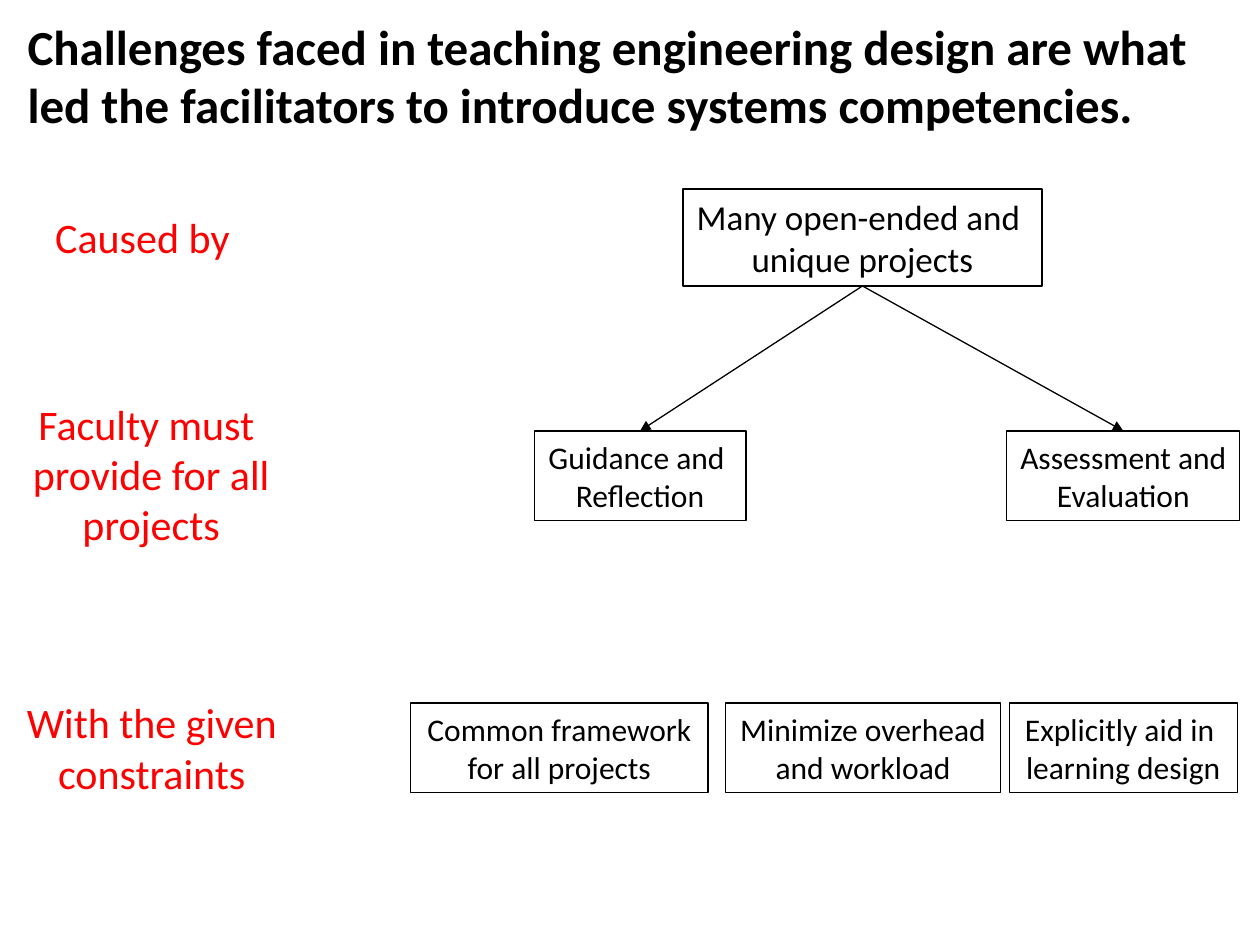
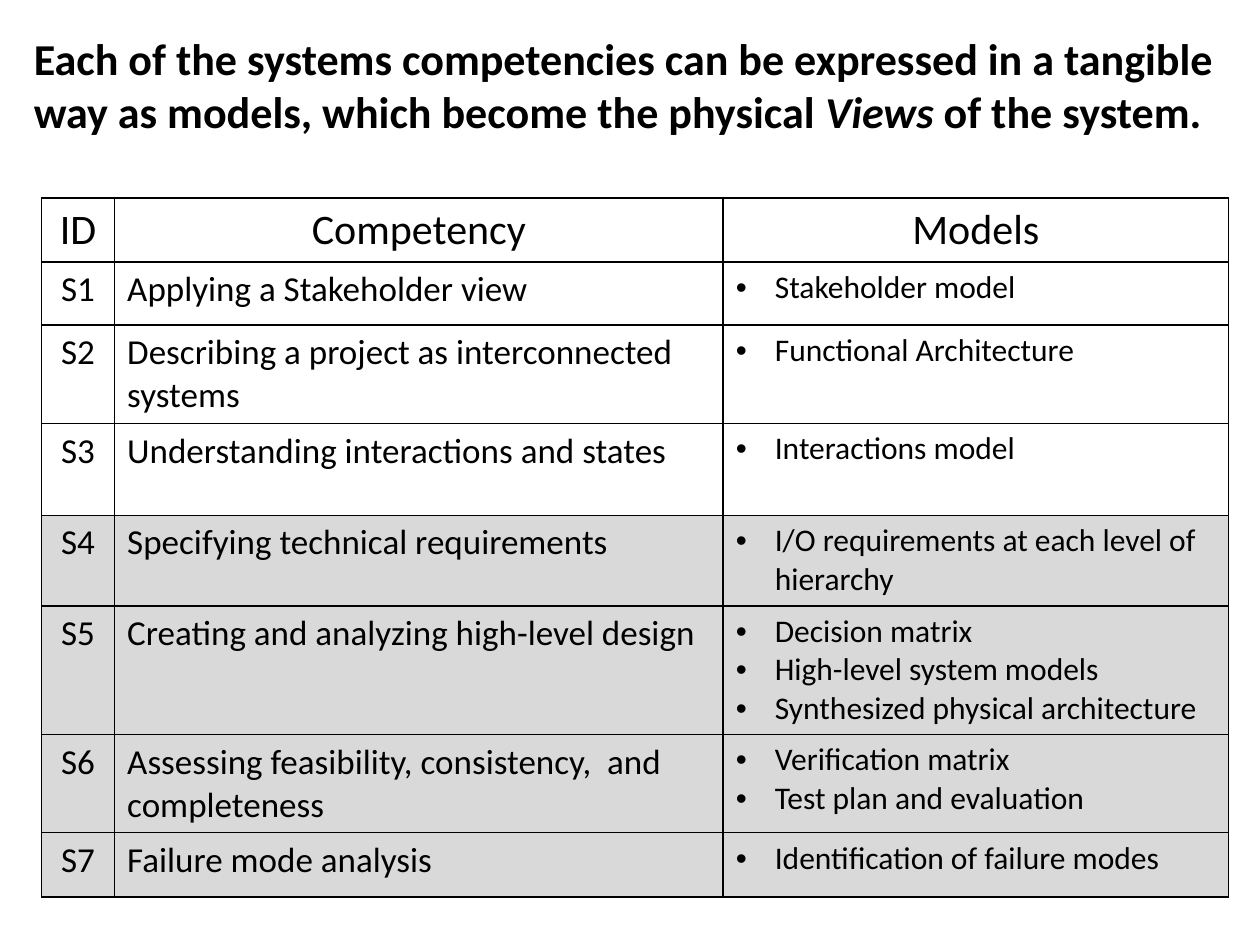
from pptx import Presentation
from pptx.dml.color import RGBColor
from pptx.enum.shapes import MSO_CONNECTOR, MSO_SHAPE
from pptx.enum.text import MSO_ANCHOR, PP_ALIGN
from pptx.oxml import parse_xml
from pptx.oxml.ns import nsdecls
from pptx.oxml.xmlchemy import OxmlElement
from pptx.util import Inches, Pt

COLORS = {"ink": "000000", "label": "FF0000", "paper": "FFFFFF", "shade": "D9D9D9"}
FONT = "Calibri"
BULLET_INDENT = Inches(0.31)
TOP, BOTTOM = 0, 2  # connection sites of a rectangle

LABELS = [
    ((0.34, 1.63, 1.6, 0.5), ["Caused by"], PP_ALIGN.LEFT),
    ((0.15, 3.11, 2.1, 1.31), ["Faculty must ", "provide for all", "projects"], PP_ALIGN.CENTER),
    ((0.1, 5.48, 2.21, 0.91), ["With the given", "constraints"], PP_ALIGN.CENTER),
]
NEEDS = [
    ((7.99, 3.42, 1.85, 0.71), ["Assessment and", "Evaluation"]),
    ((4.24, 3.42, 1.68, 0.71), ["Guidance and ", "Reflection"]),
]
CONSTRAINTS = [
    ((3.26, 5.58, 2.36, 0.71), ["Common framework", "for all projects"]),
    ((5.76, 5.58, 2.18, 0.71), ["Minimize overhead", "and workload"]),
    ((8.01, 5.58, 1.81, 0.71), ["Explicitly aid in ", "learning design"]),
]

HEADINGS = ["ID", "Competency", "Models"]
COLUMN_WIDTHS = [0.58, 4.83, 4.01]
ROW_HEIGHTS = [0.51, 0.5, 0.78, 0.73, 0.72, 1.02, 0.78, 0.51]
FIRST_SHADED_ROW = 4
COMPETENCIES = [
    ("Applying a Stakeholder view", ["Stakeholder model"]),
    ("Describing a project as interconnected systems", ["Functional Architecture"]),
    ("Understanding interactions and states", ["Interactions model"]),
    ("Specifying technical requirements", ["I/O requirements at each level of hierarchy"]),
    ("Creating and analyzing high-level design",
     ["Decision matrix", "High-level system models", "Synthesized physical architecture"]),
    ("Assessing feasibility, consistency,  and completeness",
     ["Verification matrix", "Test plan and evaluation"]),
    ("Failure mode analysis", ["Identification of failure modes"]),
]


def rgb(name):
    return RGBColor.from_string(COLORS[name])


def write(frame, lines, size=18, color="ink", bold=False, align=PP_ALIGN.LEFT,
          bullet=False, italic_word=None):
    """Put each line in its own paragraph, with one word optionally in italics."""
    for number, line in enumerate(lines):
        paragraph = frame.add_paragraph() if number else frame.paragraphs[0]
        paragraph.alignment = align
        for part in line.partition(italic_word) if italic_word else [line]:
            run = paragraph.add_run()
            run.text = part
            run.font.name, run.font.size, run.font.bold = FONT, Pt(size), bold
            run.font.italic = part == italic_word
            run.font.color.rgb = rgb(color)
        if bullet:
            add_bullet(paragraph)


def add_bullet(paragraph):
    properties = paragraph._p.get_or_add_pPr()
    properties.set("marL", str(BULLET_INDENT))
    properties.set("indent", str(-BULLET_INDENT))
    for tag, key, value in (("a:buFont", "typeface", "Arial"), ("a:buChar", "char", "•")):
        mark = OxmlElement(tag)
        mark.set(key, value)
        properties.append(mark)


def add_text(slide, box, lines, anchor=MSO_ANCHOR.TOP, **text_format):
    frame = slide.shapes.add_textbox(*map(Inches, box)).text_frame
    frame.word_wrap = True
    frame.vertical_anchor = anchor
    write(frame, lines, **text_format)


def add_title(slide, box, title, **text_format):
    add_text(slide, box, [title], anchor=MSO_ANCHOR.MIDDLE, bold=True, **text_format)


def add_box(slide, box, lines, size=18):
    rectangle = slide.shapes.add_shape(MSO_SHAPE.RECTANGLE, *map(Inches, box))
    rectangle.shadow.inherit = False
    rectangle.fill.background()
    rectangle.line.color.rgb = rgb("ink")
    rectangle.line.width = Pt(0.75)
    rectangle.text_frame.word_wrap = False
    write(rectangle.text_frame, lines, size=size, align=PP_ALIGN.CENTER)
    return rectangle


def add_arrow(slide, cause, need):
    arrow = slide.shapes.add_connector(MSO_CONNECTOR.STRAIGHT, 0, 0, 0, 0)
    arrow.begin_connect(cause, BOTTOM)
    arrow.end_connect(need, TOP)
    arrow.line.color.rgb = rgb("ink")
    arrow.line.width = Pt(0.75)
    head = OxmlElement("a:tailEnd")
    head.set("type", "triangle")
    arrow.line._get_or_add_ln().append(head)
    arrow._element.spPr.append(OxmlElement("a:effectLst"))


def style_cell(cell, fill):
    cell.fill.solid()
    cell.fill.fore_color.rgb = rgb(fill)
    properties = cell._tc.get_or_add_tcPr()
    for place, side in enumerate("LRTB"):
        properties.insert(place, parse_xml(
            f'<a:ln{side} {nsdecls("a")} w="{Pt(1)}"><a:solidFill>'
            f'<a:srgbClr val="{COLORS["ink"]}"/></a:solidFill></a:ln{side}>'))


def add_competency_table(slide, left, top):
    frame = slide.shapes.add_table(
        len(ROW_HEIGHTS), len(COLUMN_WIDTHS), Inches(left), Inches(top),
        Inches(sum(COLUMN_WIDTHS)), Inches(sum(ROW_HEIGHTS)))
    table = frame.table
    table.first_row = table.horz_banding = False
    for column, width in zip(table.columns, COLUMN_WIDTHS):
        column.width = Inches(width)
    for number, (row, height) in enumerate(zip(table.rows, ROW_HEIGHTS)):
        row.height = Inches(height)
        for cell in row.cells:
            style_cell(cell, "shade" if number >= FIRST_SHADED_ROW else "paper")

    # Heading row
    for column, heading in enumerate(HEADINGS):
        write(table.cell(0, column).text_frame, [heading], size=24, align=PP_ALIGN.CENTER)

    # One row per competency
    for number, (competency, models) in enumerate(COMPETENCIES, start=1):
        id_cell, competency_cell, models_cell = table.rows[number].cells
        write(id_cell.text_frame, [f"S{number}"], size=20, align=PP_ALIGN.CENTER)
        write(competency_cell.text_frame, [competency], size=20)
        write(models_cell.text_frame, models, bullet=True)


def build_challenges(slide):
    add_title(slide, (0.12, 0.01, 9.75, 1.17),
              "Challenges faced in teaching engineering design are what led the "
              "facilitators to introduce systems competencies.", size=28)

    # Cause, and the needs that follow from it
    cause = add_box(slide, (5.42, 1.5, 2.85, 0.77),
                    ["Many open-ended and ", "unique projects"], size=20)
    for box, lines in NEEDS:
        add_arrow(slide, cause, add_box(slide, box, lines))

    # Constraints
    for box, lines in CONSTRAINTS:
        add_box(slide, box, lines)

    # Row labels
    for box, lines, align in LABELS:
        add_text(slide, box, lines, size=24, color="label", align=align)


def build_competencies(slide):
    add_title(slide, (0.17, 0.17, 9.67, 1),
              "Each of the systems competencies can be expressed in a tangible way as "
              "models, which become the physical Views of the system.",
              size=25.2, italic_word="Views")
    add_competency_table(slide, 0.33, 1.57)


def main():
    deck = Presentation()
    deck.slide_width, deck.slide_height = Inches(10), Inches(7.5)
    for build in (build_challenges, build_competencies):
        build(deck.slides.add_slide(deck.slide_layouts[6]))
    deck.save("out.pptx")


if __name__ == "__main__":
    main()
